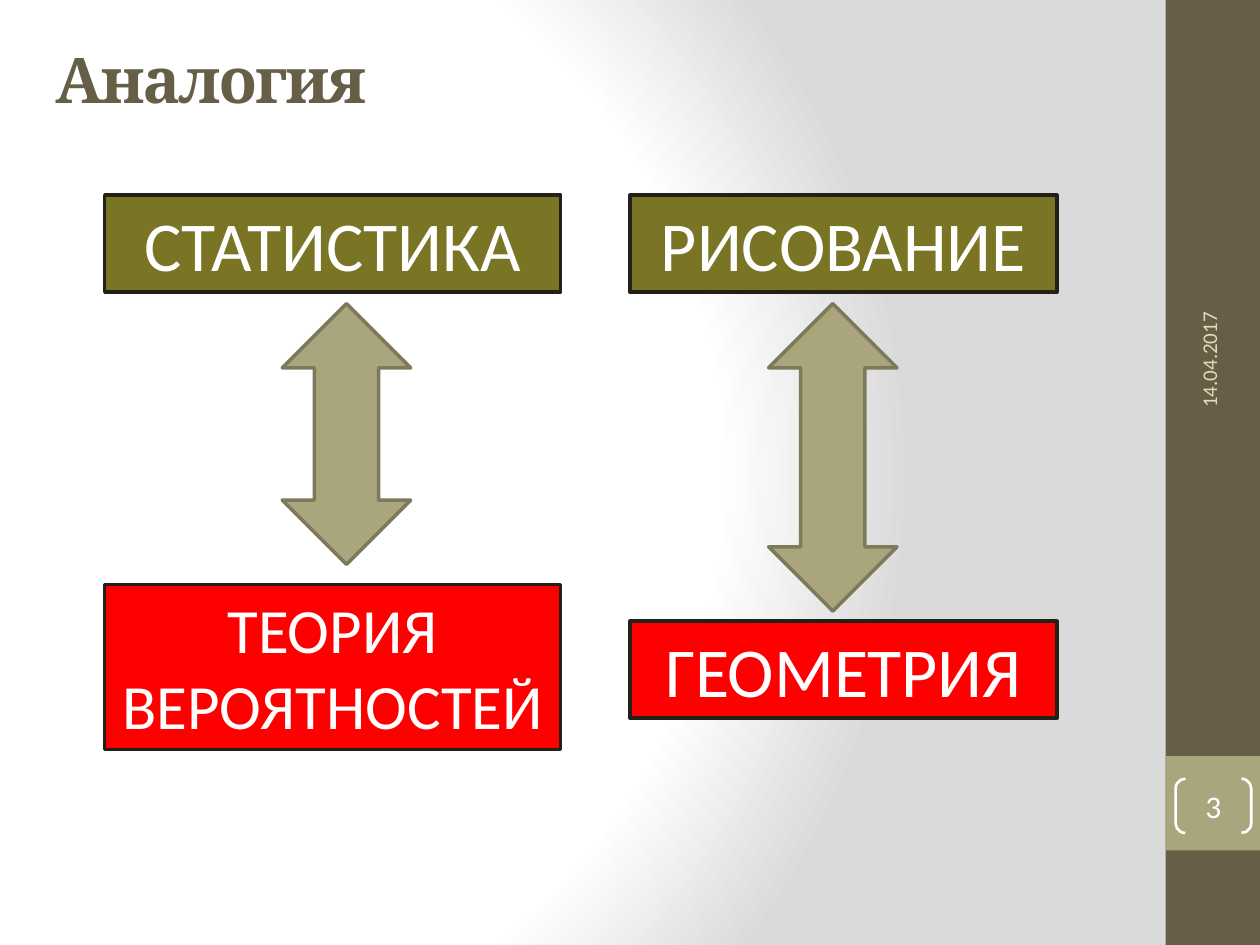
from lxml import etree
from pptx import Presentation
from pptx.dml.color import RGBColor
from pptx.enum import shapes, text
from pptx.oxml.ns import qn
from pptx.util import Pt

BROWN = RGBColor(0x67, 0x5E, 0x47)
KHAKI = RGBColor(0xA9, 0xA5, 0x7C)
KHAKI_DARK = RGBColor(0x7D, 0x7A, 0x5C)
OLIVE = RGBColor(0x7A, 0x74, 0x25)
RED = RGBColor(0xFF, 0x00, 0x00)
INK = RGBColor(0x23, 0x20, 0x18)
CREAM = RGBColor(0xDF, 0xDC, 0xB7)
WHITE = RGBColor(0xFF, 0xFF, 0xFF)

GRADIENT = """<a:gradFill xmlns:a="http://schemas.openxmlformats.org/drawingml/2006/main" rotWithShape="1">
<a:gsLst>
<a:gs pos="0"><a:srgbClr val="FFFFFF"/></a:gs>
<a:gs pos="75000"><a:srgbClr val="FFFFFF"/></a:gs>
<a:gs pos="100000"><a:srgbClr val="DADADA"/></a:gs>
</a:gsLst>
<a:path path="circle"><a:fillToRect l="20000" t="50000" r="100000" b="50000"/></a:path>
</a:gradFill>"""


def paint_background(slide):
    """Fill the slide with a circular white-to-grey gradient."""
    slide.background.fill.solid()
    solid = slide.element.find(".//" + qn("p:bgPr")).find(qn("a:solidFill"))
    solid.getparent().replace(solid, etree.fromstring(GRADIENT))


def add_figure(slide, kind, box, fill=None, line=None, width=2):
    """Add a flat preset shape in the given box."""
    sp = slide.shapes.add_shape(kind, *map(Pt, box))
    sp.shadow.inherit = False
    if fill is None:
        sp.fill.background()
    else:
        sp.fill.solid()
        sp.fill.fore_color.rgb = fill
    if line is None:
        sp.line.fill.background()
    else:
        sp.line.color.rgb = line
        sp.line.width = Pt(width)
    return sp


def write(sp, words, size, color, align, anchor, font="Calibri"):
    """Put one formatted paragraph into a shape and return its run."""
    tf = sp.text_frame
    tf.word_wrap = True
    tf.vertical_anchor = anchor
    tf.text = words
    p = tf.paragraphs[0]
    p.alignment = align
    r = p.runs[0]
    r.font.name = font
    r.font.size = Pt(size)
    r.font.color.rgb = color
    return r


def add_title(slide, box, words):
    """Write the slide title."""
    sp = slide.shapes.add_textbox(*map(Pt, box))
    r = write(sp, words, 36, BROWN, text.PP_ALIGN.LEFT, text.MSO_ANCHOR.MIDDLE, "Cambria")
    r.font.bold = True
    r.font._element.set("spc", "-100")


def add_sidebar(slide, box, date, number):
    """Draw the side strip with its rotated date and bracketed slide number."""
    x, y, w, h = box
    rect = shapes.MSO_SHAPE.RECTANGLE
    middle = text.MSO_ANCHOR.MIDDLE
    add_figure(slide, rect, box, BROWN)
    add_figure(slide, rect, (x, y + 0.8 * h, w, w), KHAKI)

    sp = slide.shapes.add_textbox(Pt(x - 71.3), Pt(y + 129.6), Pt(192.2), Pt(28.8))
    sp.rotation = 270
    write(sp, date, 12, CREAM, text.PP_ALIGN.LEFT, middle)

    badge = (x + 5.8, y + 0.8 * h + 13, 43.2, 31)
    sp = add_figure(slide, shapes.MSO_SHAPE.DOUBLE_BRACKET, badge, line=WHITE, width=1.5)
    sp.adjustments[0] = 0.18
    tf = sp.text_frame
    tf.margin_left = tf.margin_right = tf.margin_top = tf.margin_bottom = 0
    write(sp, number, 18, WHITE, text.PP_ALIGN.CENTER, middle)


def add_analogy(slide, box, top, bottom, arrow_dx, arrow_h):
    """Draw two labelled boxes with a double arrow between them."""
    x, y, w, h = box
    for words, size, height, dy, fill in (
        (*top, 0, OLIVE),
        (*bottom, h - bottom[2], RED),
    ):
        sp = add_figure(slide, shapes.MSO_SHAPE.RECTANGLE, (x, y + dy, w, height), fill, INK)
        write(sp, words, size, WHITE, text.PP_ALIGN.CENTER, text.MSO_ANCHOR.TOP)
    arrow = (x + arrow_dx, y + top[2] + 6.5, 73.4, arrow_h)
    add_figure(slide, shapes.MSO_SHAPE.UP_DOWN_ARROW, arrow, KHAKI, KHAKI_DARK)


def main():
    """Build and save the slide."""
    prs = Presentation()
    prs.slide_width, prs.slide_height = Pt(720), Pt(540)
    slide = prs.slides.add_slide(prs.slide_layouts[6])
    paint_background(slide)
    add_sidebar(slide, (666, 0, 54, 540), "14.04.2017", "3")
    add_title(slide, (24.5, 0, 600, 90), "Аналогия")
    add_analogy(slide, (59.8, 111.6, 260.6, 316.8), ("СТАТИСТИКА", 40, 55.4),
                ("ТЕОРИЯ ВЕРОЯТНОСТЕЙ", 36, 94.3), 101.5, 149)
    add_analogy(slide, (360, 111.6, 244, 298.8), ("РИСОВАНИЕ", 40, 55.4),
                ("ГЕОМЕТРИЯ", 40, 55.4), 79.2, 175.7)
    prs.save("out.pptx")


if __name__ == "__main__":
    main()
